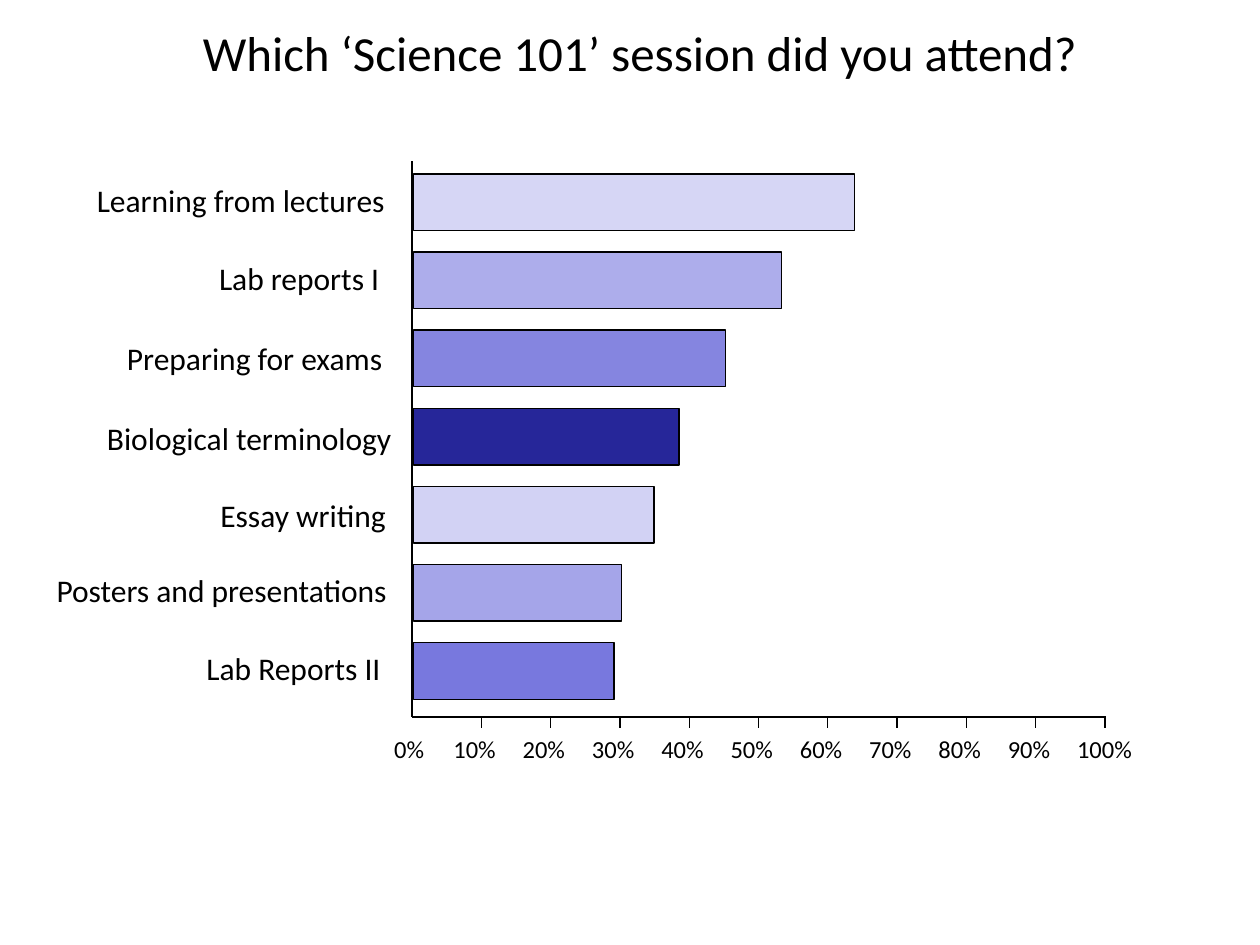
"""Build a slide with drawn bars of attendance at the Science 101 sessions."""
from lxml.etree import SubElement
from pptx import Presentation
from pptx.dml.color import RGBColor
from pptx.enum.shapes import MSO_CONNECTOR, MSO_SHAPE
from pptx.enum.text import MSO_ANCHOR, MSO_AUTO_SIZE, PP_ALIGN
from pptx.oxml.ns import qn
from pptx.util import Inches, Pt

TITLE = "Which ‘Science 101’ session did you attend?"
TITLE_BOX = (1.51, 0.13, 7.34, 0.57)
# name, percent, bar colour, label left, label top
SESSIONS = [
    ("Learning from lectures", 63.6, "D6D6F5", 0.67, 1.39),
    ("Lab reports I", 53, "ADADEB", 1.64, 2.01),
    ("Preparing for exams", 45, "8585E0", 0.91, 2.64),
    ("Biological terminology", 38.3, "262699", 0.75, 3.28),
    ("Essay writing", 34.7, "D2D2F4", 1.65, 3.89),
    ("Posters and presentations", 30, "A5A5E9", 0.35, 4.48),
    ("Lab Reports II", 28.9, "7878DE", 1.54, 5.1),
]
BLACK = "000000"
AXIS_LEFT, AXIS_TOP, AXIS_RIGHT, AXIS_BOTTOM = 3.27, 1.28, 8.78, 5.69
BAR_LEFT, BAR_TOP, BAR_HEIGHT, BAR_PITCH = 3.28, 1.38, 0.45, 0.62
TICK_PITCH, TICK_LENGTH = 0.55, 0.09
SCALE_TOP, SCALE_HEIGHT, LABEL_HEIGHT = 5.78, 0.34, 0.4


def set_values(target, values):
    """Set every attribute of the target named in a dict."""
    for name, value in values.items():
        setattr(target, name, value)


def paint(color_format, color):
    """Give a colour format a hex colour."""
    color_format.rgb = RGBColor.from_string(color)


def format_line(line, width):
    """Draw a line in black at a width in points."""
    paint(line.color, BLACK)
    line.width = Pt(width)


def write(shape, text, size):
    """Write left-aligned black text at the top of a shape."""
    frame = shape.text_frame
    frame.text = text
    set_values(frame, {"word_wrap": True, "auto_size": MSO_AUTO_SIZE.NONE,
                       "vertical_anchor": MSO_ANCHOR.TOP})
    paragraph = frame.paragraphs[0]
    paragraph.alignment = PP_ALIGN.LEFT
    set_values(paragraph.font, {"name": "Calibri", "size": Pt(size)})
    paint(paragraph.font.color, BLACK)


def add_title(slide):
    """Place and format the slide title."""
    title = slide.shapes.title
    names = ("left", "top", "width", "height")
    set_values(title, dict(zip(names, map(Inches, TITLE_BOX))))
    write(title, TITLE, 28)


def add_label(slide, text, size, box):
    """Add a text box."""
    write(slide.shapes.add_textbox(*map(Inches, box)), text, size)


def add_line(slide, ends, width):
    """Add a straight black line without a shadow."""
    line = slide.shapes.add_connector(MSO_CONNECTOR.STRAIGHT, *map(Inches, ends))
    format_line(line.line, width)
    SubElement(line.element.spPr, qn("a:effectLst"))


def add_bars(slide):
    """Add one bar and one label for each session."""
    for index, (name, percent, color, left, top) in enumerate(SESSIONS):
        box = (BAR_LEFT, BAR_TOP + index * BAR_PITCH,
               (AXIS_RIGHT - AXIS_LEFT) * percent / 100, BAR_HEIGHT)
        bar = slide.shapes.add_shape(MSO_SHAPE.RECTANGLE, *map(Inches, box))
        bar.shadow.inherit = False
        bar.fill.solid()
        paint(bar.fill.fore_color, color)
        format_line(bar.line, 0.75)
        add_label(slide, name, 18, (left, top, AXIS_LEFT - left, LABEL_HEIGHT))


def add_scale(slide):
    """Add the tick marks and percentages below the bars."""
    for step in range(11):
        position = AXIS_LEFT + step * TICK_PITCH
        if step:
            add_line(slide, (position, AXIS_BOTTOM, position,
                             AXIS_BOTTOM + TICK_LENGTH), 0.75)
        offset = 0.32 if step else 0.24
        width = 0.8 if step == 10 else 0.63
        add_label(slide, f"{step * 10}%", 14,
                  (position - offset, SCALE_TOP, width, SCALE_HEIGHT))


def main():
    """Create the presentation and save it."""
    presentation = Presentation()
    set_values(presentation, {"slide_width": Inches(10),
                              "slide_height": Inches(7.5)})
    slide = presentation.slides.add_slide(presentation.slide_layouts[5])
    add_title(slide)
    add_line(slide, (AXIS_LEFT, AXIS_TOP, AXIS_LEFT, AXIS_BOTTOM), 1.5)
    add_bars(slide)
    add_line(slide, (AXIS_LEFT, AXIS_BOTTOM, AXIS_RIGHT, AXIS_BOTTOM), 1.5)
    add_scale(slide)
    presentation.save("out.pptx")


if __name__ == "__main__":
    main()
